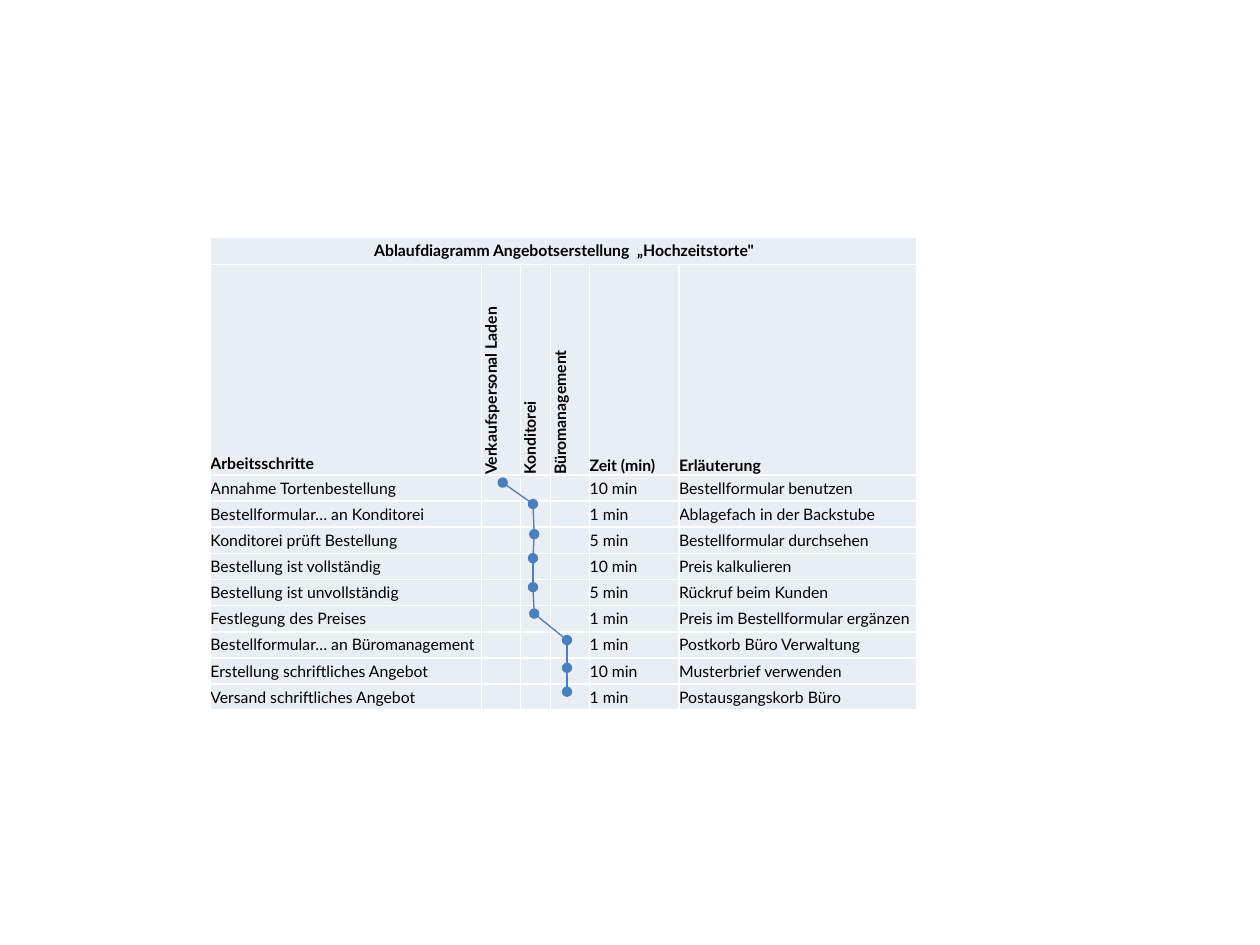
from itertools import pairwise

from lxml.etree import SubElement
from pptx import Presentation
from pptx.dml.color import RGBColor
from pptx.enum.shapes import MSO_CONNECTOR
from pptx.enum.text import MSO_ANCHOR, PP_ALIGN
from pptx.oxml.ns import qn
from pptx.util import Inches, Pt

FONT = "Lato"
TITLE = "Ablaufdiagramm Angebotserstellung  „Hochzeitstorte\""
HEADERS = ["Arbeitsschritte", "Verkaufspersonal Laden", "Konditorei",
           "Büromanagement", "Zeit (min)", "Erläuterung"]
STEPS = [
    ("Annahme Tortenbestellung", "10 min", "Bestellformular benutzen"),
    ("Bestellformular… an Konditorei", "1 min", "Ablagefach in der Backstube"),
    ("Konditorei prüft Bestellung", "5 min", "Bestellformular durchsehen"),
    ("Bestellung ist vollständig", "10 min", "Preis kalkulieren"),
    ("Bestellung ist unvollständig", "5 min", "Rückruf beim Kunden"),
    ("Festlegung des Preises", "1 min", "Preis im Bestellformular ergänzen"),
    ("Bestellformular… an Büromanagement", "1 min", "Postkorb Büro Verwaltung"),
    ("Erstellung schriftliches Angebot", "10 min", "Musterbrief verwenden"),
    ("Versand schriftliches Angebot", "1 min", "Postausgangskorb Büro"),
]
COL_WIDTHS = [2.15, 0.31, 0.24, 0.31, 0.71, 1.89]
HEIGHT, TITLE_H, HEADER_H = 3.76, 0.22, 1.67
# One dot per step, in the lane of whoever carries it out
DOTS = [(3.99, 3.83), (4.23, 4.0), (4.24, 4.24), (4.23, 4.43), (4.23, 4.66),
        (4.24, 4.87), (4.5, 5.08), (4.5, 5.3), (4.5, 5.49)]


def rgb(value):
    return RGBColor.from_string(value)


def set_borders(cell, color, width):
    tcPr = cell._tc.get_or_add_tcPr()
    for i, side in enumerate(("lnL", "lnR", "lnT", "lnB")):
        ln = tcPr.makeelement(qn(f"a:{side}"), {"w": str(Pt(width))})
        tcPr.insert(i, ln)
        fill = SubElement(ln, qn("a:solidFill"))
        SubElement(fill, qn("a:srgbClr"), val=color)


def format_cell(cell, text="", bold=False, anchor=MSO_ANCHOR.MIDDLE,
                align=PP_ALIGN.LEFT, vertical=False):
    cell.margin_left = cell.margin_right = 0
    cell.margin_top = cell.margin_bottom = 0
    cell.vertical_anchor = anchor
    cell.fill.solid()
    cell.fill.fore_color.rgb = rgb("E9EDF4")
    set_borders(cell, "FFFFFF", 1)
    if vertical:
        cell._tc.get_or_add_tcPr().set("vert", "vert270")
    p = cell.text_frame.paragraphs[0]
    p.alignment = align
    p.font.name, p.font.size, p.font.bold = FONT, Pt(9), bold
    p.font.color.rgb = rgb("000000")
    if text:
        p.add_run().text = text
    else:
        # Keeps empty cells from stretching their row
        SubElement(p._p, qn("a:endParaRPr"), sz="900")


def add_process_table(s):
    frame = s.shapes.add_table(len(STEPS) + 2, len(COL_WIDTHS), Inches(1.67),
                               Inches(1.88), Inches(sum(COL_WIDTHS)), Inches(HEIGHT))
    table = frame.table
    table.first_row = table.horz_banding = False
    for column, width in zip(table.columns, COL_WIDTHS):
        column.width = Inches(width)
    step_h = (HEIGHT - TITLE_H - HEADER_H) / len(STEPS)
    for row, height in zip(table.rows, [TITLE_H, HEADER_H] + [step_h] * len(STEPS)):
        row.height = Inches(height)

    # Title across all columns
    table.cell(0, 0).merge(table.cell(0, len(COL_WIDTHS) - 1))
    format_cell(table.cell(0, 0), TITLE, bold=True, align=PP_ALIGN.CENTER)

    # Column heads, with the lanes turned upright
    for col, text in enumerate(HEADERS):
        lane = 1 <= col <= 3
        format_cell(table.cell(1, col), text, bold=True, vertical=lane,
                    anchor=MSO_ANCHOR.MIDDLE if lane else MSO_ANCHOR.BOTTOM)
    table.cell(1, 0).margin_bottom = Inches(0.02)

    # Steps, with the lanes left free for the flow line
    for row, (step, time, note) in enumerate(STEPS, start=2):
        for col, text in enumerate((step, "", "", "", time, note)):
            format_cell(table.cell(row, col), text)


def add_flow_line(s, start, end, first=False):
    points = [Inches(v) for v in (*start, *end)]
    line = s.shapes.add_connector(MSO_CONNECTOR.STRAIGHT, *points)
    line.line.color.rgb = rgb("4B7EBC")
    line.line.width = Pt(0.75)
    ln = line.line._get_or_add_ln()
    if first:
        SubElement(ln, qn("a:headEnd"), type="oval")
    SubElement(ln, qn("a:tailEnd"), type="oval")
    SubElement(line._element.spPr, qn("a:effectLst"))


def main():
    prs = Presentation()
    prs.slide_width, prs.slide_height = Inches(10), Inches(7.5)
    s = prs.slides.add_slide(prs.slide_layouts[6])
    add_process_table(s)
    for i, (start, end) in enumerate(pairwise(DOTS)):
        add_flow_line(s, start, end, first=i == 0)
    prs.save("out.pptx")


if __name__ == "__main__":
    main()
